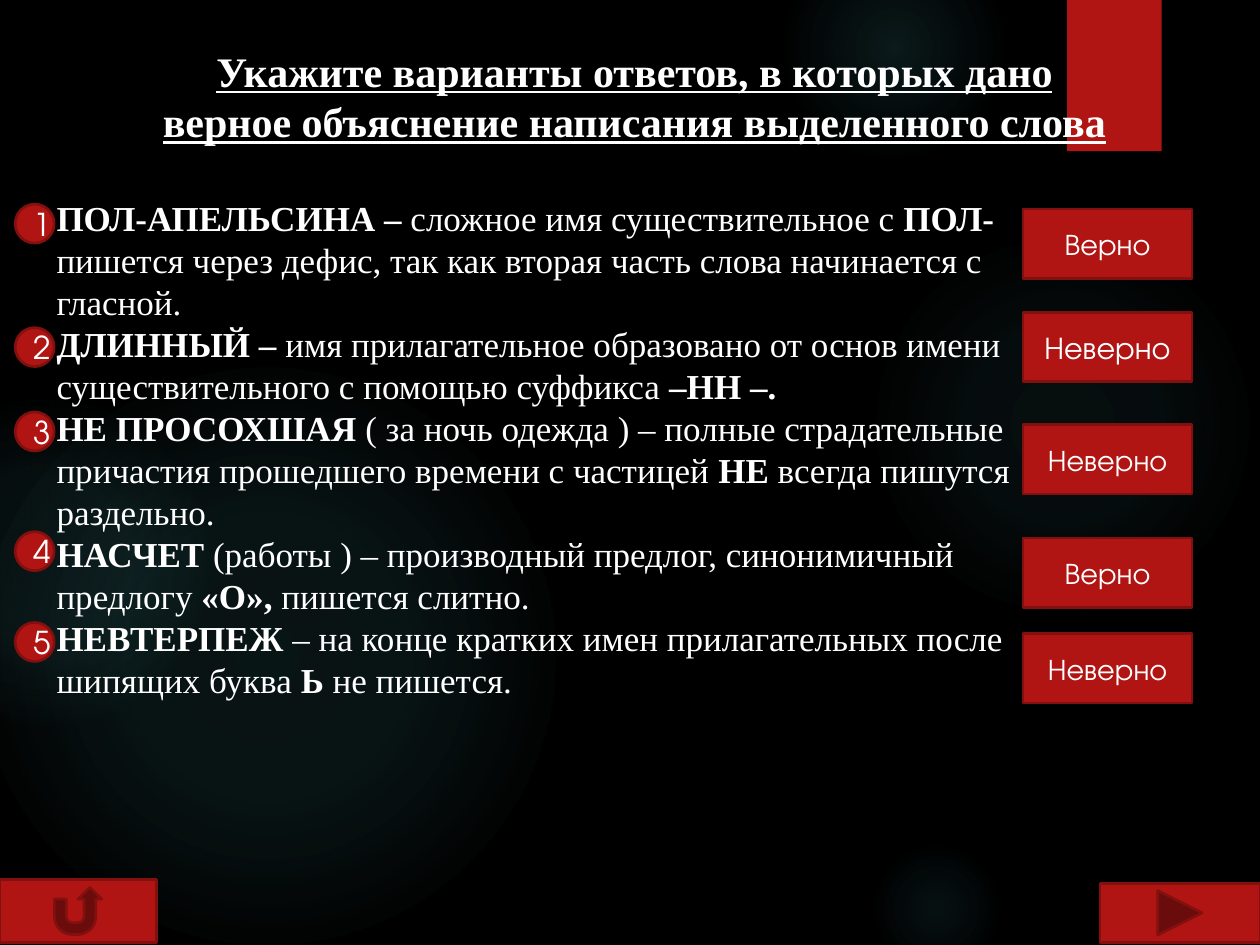
from pptx import Presentation
from pptx.dml.color import RGBColor
from pptx.enum.shapes import MSO_SHAPE as Shape
from pptx.enum.text import MSO_ANCHOR as Anchor, PP_ALIGN as Align
from pptx.oxml import parse_xml
from pptx.oxml.ns import nsdecls
from pptx.util import Inches, Pt

WIDTH, HEIGHT = 10, 7.5
COLORS = {"background": "000000", "glow": "50B9C1", "red": "B01513",
          "edge": "82100E", "text": "FFFFFF"}
SERIF, SANS = "Times New Roman", "TeX Gyre Adventor"
TITLE = ("Укажите варианты ответов, в которых дано верное объяснение "
         "написания выделенного слова")
GLOWS = [
    (6.89, 1.83, 3.08, [(0, 7), (36, 6), (69, 0)]),
    (6.22, -0.5, 1.75, [(0, 14), (36, 7), (73, 0)]),
    (6.89, 6.67, 1.08, [(0, 9), (36, 5), (66, 0)]),
    (-0.17, 2.92, 4.58, [(0, 11), (36, 10), (75, 0)]),
    (-0.92, 3.17, 2.58, [(0, 8), (36, 8), (72, 0)]),
]
STATEMENTS = [
    ["ПОЛ-АПЕЛЬСИНА – ", "сложное имя существительное с ", "ПОЛ-",
     " пишется через дефис, так как вторая часть слова начинается с гласной."],
    ["ДЛИННЫЙ – ", "имя прилагательное образовано от основ имени "
     "существительного с помощью суффикса ", "–НН –."],
    ["НЕ ПРОСОХШАЯ ", "( за ночь одежда ) – полные страдательные причастия "
     "прошедшего времени с частицей ", "НЕ", " всегда пишутся раздельно."],
    ["НАСЧЕТ", " (работы ) – производный предлог, синонимичный предлогу ",
     "«О», ", "пишется слитно."],
    ["НЕВТЕРПЕЖ ", "– на конце кратких имен прилагательных после шипящих буква ",
     "Ь ", "не пишется."],
]
BADGE_TOPS = [1.62, 2.6, 3.27, 4.22, 4.94]
ANSWERS = [("Верно", 1.66, 17), ("Неверно", 2.48, 18), ("Неверно", 3.37, 17),
           ("Верно", 4.27, 17), ("Неверно", 5.03, 17)]


def color(name):
    """Return the named colour."""
    return RGBColor.from_string(COLORS[name])


def add_run(paragraph, text, **formats):
    """Add a white run with the given font values."""
    run = paragraph.add_run()
    run.text = text
    run.font.color.rgb = color("text")
    for key, value in formats.items():
        setattr(run.font, key, value)


def add_shape(slide, kind, box, outlined=True):
    """Add a red shape, with a dark edge if outlined."""
    shape = slide.shapes.add_shape(kind, *map(Inches, box))
    shape.shadow.inherit = False
    shape.fill.solid()
    shape.fill.fore_color.rgb = color("red")
    if outlined:
        shape.line.color.rgb = color("edge")
        shape.line.width = Pt(1.5)
    else:
        shape.line.fill.background()
    return shape


def add_label(slide, kind, box, text, size):
    """Add a red shape with a centred label."""
    frame = add_shape(slide, kind, box).text_frame
    frame.vertical_anchor = Anchor.MIDDLE
    frame.paragraphs[0].alignment = Align.CENTER
    add_run(frame.paragraphs[0], text, size=Pt(size), name=SANS)


def add_text_frame(slide, box):
    """Add a wrapping text box and return its frame."""
    frame = slide.shapes.add_textbox(*map(Inches, box)).text_frame
    frame.word_wrap = True
    return frame


def add_glow(slide, box, stops):
    """Add a circle that fades out from its centre."""
    shape = add_shape(slide, Shape.OVAL, box, outlined=False)
    shape.fill.background()
    stop_xml = "".join(
        f'<a:gs pos="{position * 1000}"><a:srgbClr val="{COLORS["glow"]}">'
        f'<a:alpha val="{alpha * 1000}"/></a:srgbClr></a:gs>'
        for position, alpha in stops)
    gradient = parse_xml(
        f'<a:gradFill {nsdecls("a")} rotWithShape="1"><a:gsLst>{stop_xml}</a:gsLst>'
        '<a:path path="circle"><a:fillToRect l="50000" t="50000" r="50000" '
        'b="50000"/></a:path></a:gradFill>')
    properties = shape.element.spPr
    properties.replace(properties.find("{*}noFill"), gradient)


def add_backdrop(slide):
    """Fill the slide with black, glows and the ribbon."""
    slide.background.fill.solid()
    slide.background.fill.fore_color.rgb = color("background")
    for left, top, size, stops in GLOWS:
        add_glow(slide, (left, top, size, size), stops)
    add_shape(slide, Shape.RECTANGLE, (8.47, 0, 0.75, 1.2), outlined=False)


def add_title(slide, box):
    """Write the underlined task."""
    paragraph = add_text_frame(slide, box).paragraphs[0]
    paragraph.alignment = Align.CENTER
    add_run(paragraph, TITLE, size=Pt(24), name=SERIF, bold=True, underline=True)


def add_statements(slide, box):
    """Write the statements, whose parts alternate bold and regular."""
    frame = add_text_frame(slide, box)
    for index, parts in enumerate(STATEMENTS):
        paragraph = frame.add_paragraph() if index else frame.paragraphs[0]
        for part_index, text in enumerate(parts):
            add_run(paragraph, text, size=Pt(20), name=SERIF,
                    bold=part_index % 2 == 0)


def add_badges(slide, left, size):
    """Number the statements in a column of circles."""
    for number, top in enumerate(BADGE_TOPS, 1):
        add_label(slide, Shape.OVAL, (left, top, size, size), str(number), 18)


def add_answers(slide, left, width, height):
    """Add the column of answer buttons."""
    for text, top, size in ANSWERS:
        add_label(slide, Shape.RECTANGLE, (left, top, width, height), text, size)


def add_navigation(slide):
    """Add the return and forward buttons in the bottom corners."""
    add_shape(slide, Shape.ACTION_BUTTON_FORWARD_OR_NEXT,
              (WIDTH - 1.27, 7.01, 1.27, 0.47))
    add_shape(slide, Shape.ACTION_BUTTON_RETURN, (0, 6.98, 1.24, 0.5))


def main():
    """Build and save the slide."""
    presentation = Presentation()
    presentation.slide_width = Inches(WIDTH)
    presentation.slide_height = Inches(HEIGHT)
    slide = presentation.slides.add_slide(presentation.slide_layouts[6])
    add_backdrop(slide)
    add_title(slide, (1.09, 0.31, 7.89, 1.21))
    add_statements(slide, (0.35, 1.51, 8.19, 4.14))
    add_badges(slide, 0.12, 0.31)
    add_answers(slide, 8.12, 1.34, 0.55)
    add_navigation(slide)
    presentation.save("out.pptx")


if __name__ == "__main__":
    main()
